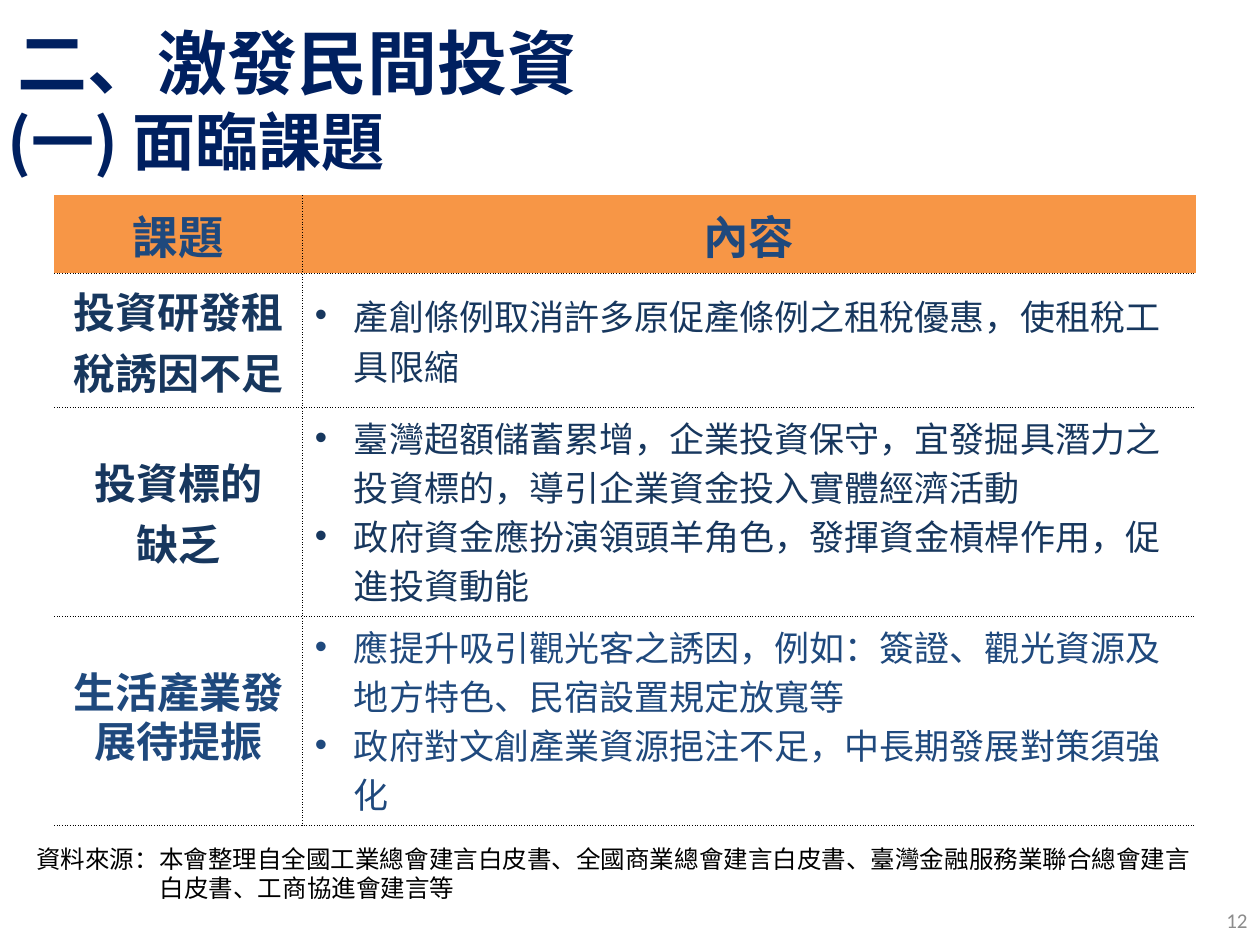
from lxml.etree import SubElement
from pptx import Presentation
from pptx.dml.color import RGBColor
from pptx.enum.text import MSO_ANCHOR, MSO_AUTO_SIZE, PP_ALIGN
from pptx.oxml import parse_xml
from pptx.oxml.ns import nsdecls, qn
from pptx.util import Inches, Pt

NOTO = "Noto Sans CJK SC"
LEFT, MID, RIGHT = PP_ALIGN.LEFT, PP_ALIGN.CENTER, PP_ALIGN.RIGHT


def write(frame, lines, size, color, bold=False, align=LEFT, name=NOTO,
          hang=0, bullet=False, space=None, anchor=MSO_ANCHOR.MIDDLE):
    """Fill a text frame with one paragraph per line, all in one format."""
    frame.word_wrap = True
    frame.vertical_anchor = anchor
    for i, line in enumerate(lines):
        para = frame.paragraphs[0] if i == 0 else frame.add_paragraph()
        para.alignment = align
        if space:
            para.line_spacing = Pt(space)
        props = para._p.get_or_add_pPr()
        if hang:
            props.set("marL", str(Inches(hang)))
            props.set("indent", str(-Inches(hang)))
        if bullet:
            SubElement(props, qn("a:buFont"), typeface="Arial")
            SubElement(props, qn("a:buChar"), char="•")
        run = para.add_run()
        run.text = line
        look = {"size": Pt(size), "bold": bold, "name": name}
        for key, value in look.items():
            setattr(run.font, key, value)
        run.font.color.rgb = RGBColor.from_string(color)
        SubElement(run._r.get_or_add_rPr(), qn("a:ea"), typeface=name)


def edge(cell, side, shown):
    """Give one side of a cell a dotted line, or none."""
    fill = ('<a:solidFill><a:srgbClr val="000000"/></a:solidFill>'
            '<a:prstDash val="sysDot"/>') if shown else "<a:noFill/>"
    line = f'<a:ln{side} {nsdecls("a")} w="{Pt(0.5)}">{fill}</a:ln{side}>'
    cell._tc.get_or_add_tcPr().append(parse_xml(line))


deck = Presentation()
deck.slide_width, deck.slide_height = Inches(10), Inches(7.5)
slide = deck.slides.add_slide(deck.slide_layouts[5])

# Title and section heading
title = slide.shapes.title
title.left, title.top = Inches(0.04), Inches(0.13)
title.width, title.height = Inches(10), Inches(0.71)
title.text_frame.auto_size = MSO_AUTO_SIZE.NONE
write(title.text_frame, ["二、激發民間投資"], 40, "002060", True, hang=0.79)

head = slide.shapes.add_textbox(
    Inches(-0.04), Inches(0.76), Inches(10), Inches(0.71))
write(head.text_frame, ["(一) 面臨課題"], 36, "002060", True, hang=0.79)

# Table of issues: height, colour, issue format, issue, points format, points
NAVY, BLUE = "17375E", "1F497D"
label = {"size": 24, "bold": True, "align": MID}
point = {"size": 20, "hang": 0.31, "bullet": True}
top = {"size": 26, "bold": True, "align": MID}
tight = {"space": 28}
rows = [
    (0.62, BLUE, top, ["課題"], top, ["內容"]),
    (1.06, NAVY, label, ["投資研發租稅誘因不足"], point,
     ["產創條例取消許多原促產條例之租稅優惠，使租稅工具限縮"]),
    (1.66, NAVY, label, ["投資標的", "缺乏"], point | tight,
     ["臺灣超額儲蓄累增，企業投資保守，宜發掘具潛力之投資標的，導引企業資金投入實體經濟活動",
      "政府資金應扮演領頭羊角色，發揮資金槓桿作用，促進投資動能"]),
    (1.66, BLUE, label | tight, ["生活產業發展待提振"], point | tight,
     ["應提升吸引觀光客之誘因，例如：簽證、觀光資源及地方特色、民宿設置規定放寬等",
      "政府對文創產業資源挹注不足，中長期發展對策須強化"]),
]
table = slide.shapes.add_table(
    len(rows), 2, Inches(0.43), Inches(1.55), Inches(9.06), Inches(5)).table
table.first_row = table.horz_banding = False
for col, width in zip(table.columns, (1.97, 7.09)):
    col.width = Inches(width)
for r, (height, color, *parts) in enumerate(rows):
    table.rows[r].height = Inches(height)
    for c in range(2):
        cell = table.cell(r, c)
        look, lines = parts[2 * c:2 * c + 2]
        cell.vertical_anchor = MSO_ANCHOR.MIDDLE
        sides = {"L": c == 1, "R": c == 0, "T": r > 0, "B": True}
        for side, shown in sides.items():
            edge(cell, side, shown)
        if r == 0:
            cell.fill.solid()
            cell.fill.fore_color.rgb = RGBColor.from_string("F79646")
        else:
            cell.fill.background()
        write(cell.text_frame, lines, color=color, **look)

# Source note and page number
note = slide.shapes.add_textbox(
    Inches(0.19), Inches(6.65), Inches(9.45), Inches(0.57))
write(note.text_frame,
      ["資料來源：本會整理自全國工業總會建言白皮書、全國商業總會建言白皮書、"
       "臺灣金融服務業聯合總會建言白皮書、工商協進會建言等"],
      14, "000000", hang=0.98, anchor=MSO_ANCHOR.TOP)

page = slide.shapes.add_textbox(
    Inches(7.67), Inches(7.1), Inches(2.33), Inches(0.4))
write(page.text_frame, ["12"], 12, "8C8C8C", align=RIGHT, name="Calibri")

deck.save("out.pptx")
